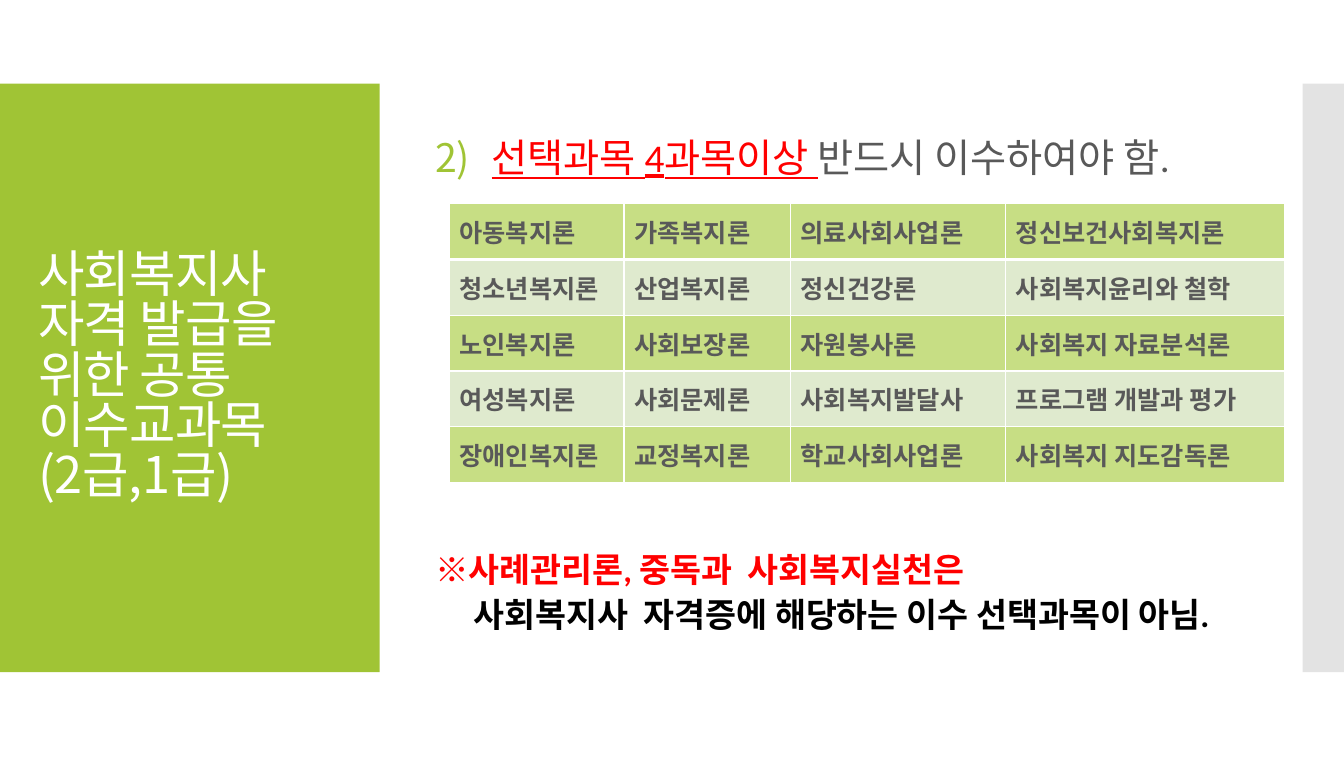
from lxml import etree
from pptx import Presentation
from pptx import util as u
from pptx.dml import color
from pptx.enum import shapes, text
from pptx.oxml import ns

KOR = "Noto Sans CJK KR"


def paint(fill, tone):
    fill.solid()
    fill.fore_color.rgb = color.RGBColor.from_string(tone)


def style(run, size, tone, bold=False, face="Calibri"):
    font = run.font
    font.size, font.bold, font.name = u.Pt(size), bold, face
    paint(font.fill, tone)
    east = etree.SubElement(run._r.get_or_add_rPr(), ns.qn("a:ea"))
    east.set("typeface", KOR)


deck = Presentation()
deck.slide_width, deck.slide_height = u.Inches(13.31), u.Inches(7.5)
slide = deck.slides.add_slide(deck.slide_layouts[6])

for left, wide, tone in [(0, 3.76, "A0C435"), (12.9, 0.41, "C8C8C8")]:
    band = slide.shapes.add_shape(
        shapes.MSO_SHAPE.RECTANGLE,
        u.Inches(left), u.Inches(0.83), u.Inches(wide), u.Inches(5.83))
    band.shadow.inherit = False
    band.line.fill.background()
    paint(band.fill, tone)
tint = band.fill._xPr.find(".//" + ns.qn("a:srgbClr"))
etree.SubElement(tint, ns.qn("a:alpha")).set("val", "50000")

frames = []
for left, top, wide, high in [
    (0.28, 1.23, 3.22, 5.03),
    (4.21, 1.15, 8.43, 0.8),
    (4.21, 5.26, 8.43, 1.2),
]:
    box = slide.shapes.add_textbox(
        u.Inches(left), u.Inches(top), u.Inches(wide), u.Inches(high))
    frame = box.text_frame
    frame.word_wrap = True
    frame.vertical_anchor = text.MSO_ANCHOR.MIDDLE
    frames.append(frame)
title, head, note = frames

title.text = "사회복지사 자격 발급을 위한 공통 \v이수교과목\v(2급,1급)"
para = title.paragraphs[0]
para.line_spacing = 0.83
for run in para.runs:
    style(run, 36, "FFFFFF", face=KOR)
    run.font._element.set("spc", "-60")

para = head.paragraphs[0]
for words, tone, under in [
    ("선택과목 4과목이상 ", "FF0000", True),
    ("반드시 이수하여야 함.", "595959", False),
]:
    run = para.add_run()
    run.text = words
    style(run, 28, tone)
    run.font.underline = under
props = para._p.get_or_add_pPr()
props.set("marL", str(u.Inches(0.56)))
props.set("indent", str(u.Inches(-0.56)))
hue = etree.SubElement(props, ns.qn("a:buClr"))
etree.SubElement(hue, ns.qn("a:srgbClr")).set("val", "A0C435")
mark = etree.SubElement(props, ns.qn("a:buAutoNum"))
mark.set("type", "arabicParenR")
mark.set("startAt", "2")

note.text = "※사례관리론, 중독과  사회복지실천은\n사회복지사  자격증에 해당하는 이수 선택과목이 아님."
for para, tone in zip(note.paragraphs, ["FF0000", "000000"]):
    style(para.runs[0], 24, tone, True)
para.space_before = u.Pt(3)
para._p.get_or_add_pPr().set("marL", str(u.Inches(0.38)))

names = [
    ["아동복지론", "가족복지론", "의료사회사업론", "정신보건사회복지론"],
    ["청소년복지론", "산업복지론", "정신건강론", "사회복지윤리와 철학"],
    ["노인복지론", "사회보장론", "자원봉사론", "사회복지 자료분석론"],
    ["여성복지론", "사회문제론", "사회복지발달사", "프로그램 개발과 평가"],
    ["장애인복지론", "교정복지론", "학교사회사업론", "사회복지 지도감독론"],
]
grid = slide.shapes.add_table(
    5, 4, u.Inches(4.45), u.Inches(2.02), u.Inches(8.27), u.Inches(2.76)).table
for col, wide in zip(grid.columns, [1.73, 1.65, 2.13, 2.76]):
    col.width = u.Inches(wide)
for r, row in enumerate(names):
    for c, name in enumerate(row):
        cell = grid.cell(r, c)
        cell.text = name
        cell.vertical_anchor = text.MSO_ANCHOR.MIDDLE
        style(cell.text_frame.paragraphs[0].runs[0], 18, "595959", True)
        props = cell._tc.get_or_add_tcPr()
        for side in "LRTB":
            thick = (r, side) in [(0, "B"), (1, "T")]
            edge = etree.SubElement(props, ns.qn("a:ln" + side))
            edge.set("w", str(u.Pt(3 if thick else 1)))
            ink = etree.SubElement(edge, ns.qn("a:solidFill"))
            etree.SubElement(ink, ns.qn("a:srgbClr")).set("val", "FFFFFF")
        paint(cell.fill, "DFEACE" if r % 2 else "C7DE84")

deck.save("out.pptx")
